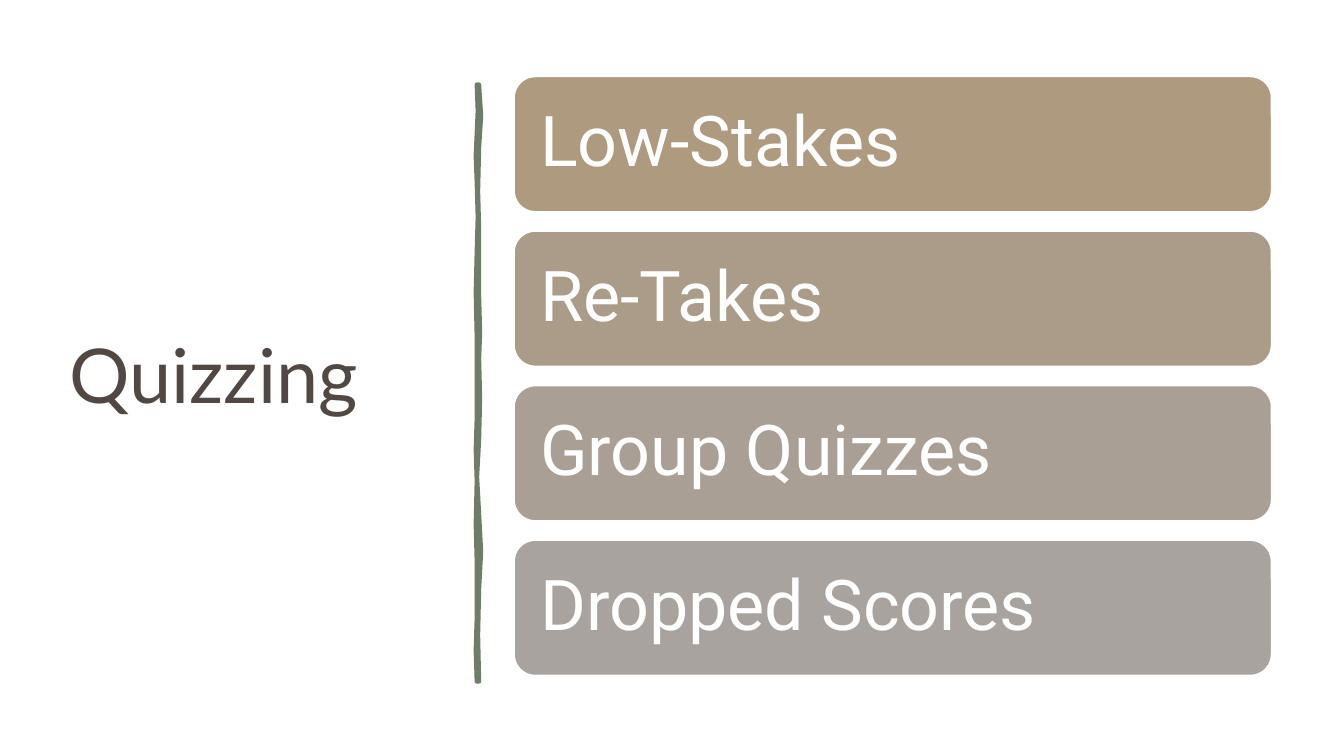
from pptx import Presentation
from pptx.dml.color import RGBColor
from pptx.enum.shapes import MSO_SHAPE
from pptx.enum.text import MSO_ANCHOR, MSO_AUTO_SIZE, PP_ALIGN
from pptx.util import Pt

PX = 9144  # 100 px to the inch
SLIDE_SIZE = (1333, 750)

TITLE = "Quizzing"
TITLE_BOX = (69, 70, 374, 611)
STRATEGIES = [
    ("Low-Stakes", "AE9A7E"),
    ("Re-Takes", "AB9C89"),
    ("Group Quizzes", "A99F94"),
    ("Dropped Scores", "A8A39E"),
]
CARD_LEFT, CARD_WIDTH, CARD_HEIGHT = 508, 755, 138
CARDS_TOP, CARDS_BOTTOM = 74, 672

# Hand-drawn divider: right edge downwards, then left edge upwards
DIVIDER_COLOR = "6D7D66"
DIVIDER_POINTS = [
    (475, 84), (477, 115), (475, 146), (474, 190), (475, 226), (475, 294),
    (476, 330), (475, 356), (476, 395), (475, 436), (473, 473), (475, 510),
    (477, 547), (475, 584), (474, 630), (475, 676),
    (473, 676), (472, 645), (473, 613), (473, 557), (472, 520), (473, 477),
    (472, 446), (473, 415), (473, 335), (472, 290), (473, 250), (474, 215),
    (473, 181), (472, 155), (474, 110), (473, 84),
]


def px(*lengths):
    return [round(length * PX) for length in lengths]


def rgb(color):
    return RGBColor.from_string(color)


def write(shape, text, font, size, color, inset_x, inset_y):
    """Put one left-aligned, vertically centred line of text in the shape."""
    frame = shape.text_frame
    frame.text = text
    frame.word_wrap = True
    frame.auto_size = MSO_AUTO_SIZE.NONE
    frame.vertical_anchor = MSO_ANCHOR.MIDDLE
    frame.margin_left, frame.margin_right = px(inset_x, inset_x)
    frame.margin_top, frame.margin_bottom = px(inset_y, inset_y)
    paragraph = frame.paragraphs[0]
    paragraph.alignment = PP_ALIGN.LEFT
    paragraph.line_spacing = 0.9
    run_font = paragraph.runs[0].font
    run_font.name, run_font.size = font, Pt(size)
    run_font.color.rgb = rgb(color)


def paint(shape, fill, line, line_width):
    shape.shadow.inherit = False
    shape.fill.solid()
    shape.fill.fore_color.rgb = rgb(fill)
    shape.line.color.rgb = rgb(line)
    shape.line.width = Pt(line_width)


def add_title(slide):
    title = slide.shapes.title
    title.left, title.top, title.width, title.height = px(*TITLE_BOX)
    write(title, TITLE, "Lato", 54, "514843", 0, 5)


def add_divider(slide):
    start, *others = DIVIDER_POINTS
    builder = slide.shapes.build_freeform(*start, scale=PX)
    builder.add_line_segments(others, close=True)
    paint(builder.convert_to_shape(), DIVIDER_COLOR, DIVIDER_COLOR, 3.25)


def add_cards(slide):
    pitch = (CARDS_BOTTOM - CARD_HEIGHT - CARDS_TOP) / (len(STRATEGIES) - 1)
    for index, (text, color) in enumerate(STRATEGIES):
        box = px(CARD_LEFT, CARDS_TOP + index * pitch, CARD_WIDTH, CARD_HEIGHT)
        card = slide.shapes.add_shape(MSO_SHAPE.ROUNDED_RECTANGLE, *box)
        paint(card, color, "FFFFFF", 3.78)
        write(card, text, "Roboto", 50, "FFFFFF", 21, 21)


def main():
    presentation = Presentation()
    presentation.slide_width, presentation.slide_height = px(*SLIDE_SIZE)
    slide = presentation.slides.add_slide(presentation.slide_layouts[5])
    add_title(slide)
    add_divider(slide)
    add_cards(slide)
    presentation.save("out.pptx")


if __name__ == "__main__":
    main()
